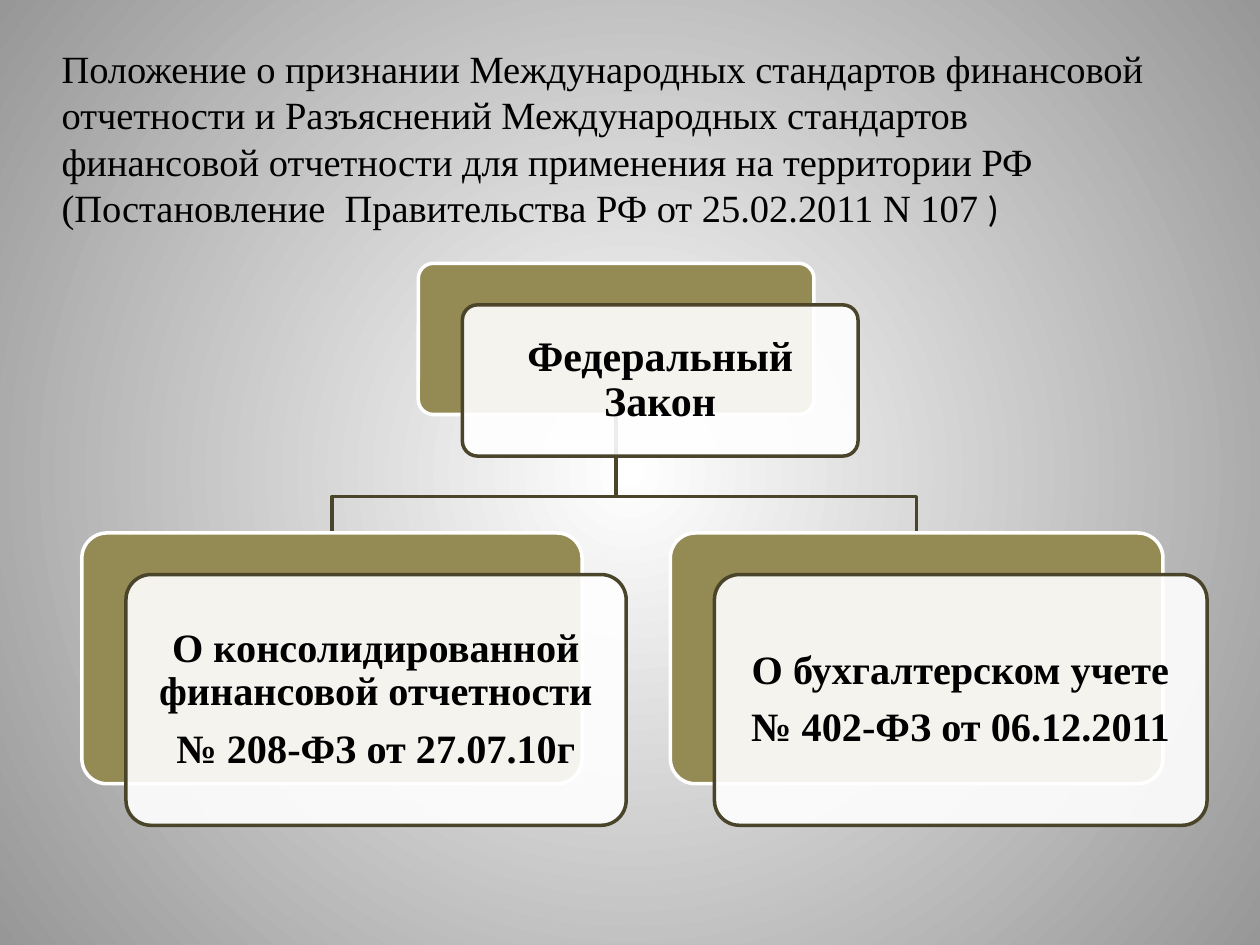
from dataclasses import dataclass

from lxml import etree
from pptx import Presentation
from pptx import util as u
from pptx.dml.color import RGBColor
from pptx.enum import shapes, text
from pptx.oxml import parse_xml
from pptx.oxml.ns import nsdecls, qn

Inches = u.Inches


@dataclass(frozen=True)
class Theme:
    olive: RGBColor = RGBColor(0x94, 0x8A, 0x54)
    dark: RGBColor = RGBColor(0x4A, 0x45, 0x2A)
    white: RGBColor = RGBColor(0xFF, 0xFF, 0xFF)
    grey: RGBColor = RGBColor(0x97, 0x97, 0x97)
    black: RGBColor = RGBColor(0, 0, 0)
    font: str = "Times New Roman"
    bracket_font: str = "Calibri"
    title_size: int = 22
    bracket_size: int = 21
    root_size: int = 24
    law_size: int = 23
    line_width: int = 2
    card_alpha: int = 90


T = Theme()
CARD_SHIFT = (0.35, 0.33)  # front card relative to its backing

TITLE = ("Положение о признании Международных стандартов финансовой отчетности "
         "и Разъяснений Международных стандартов финансовой отчетности для "
         "применения на территории РФ (Постановление  Правительства РФ "
         "от 25.02.2011 N 107 ")

# left, top, width, height, type size, paragraphs
NODES = [
    (3.32, 2.09, 3.14, 1.2, T.root_size, ["Федеральный Закон"]),
    (0.65, 4.23, 3.97, 1.99, T.law_size,
     ["О консолидированной финансовой отчетности", "№ 208-ФЗ от 27.07.10г"]),
    (5.32, 4.23, 3.91, 1.99, T.law_size,
     ["О бухгалтерском учете", "№ 402-ФЗ от 06.12.2011"]),
]


def set_background(s):
    """Radial gradient, light in the centre."""
    fill = s.background.fill
    fill.gradient()
    for stop, color in zip(fill.gradient_stops, (T.white, T.grey)):
        stop.color.rgb = color
    grad = s.background._cSld.find(".//" + qn("a:gradFill"))
    grad.remove(grad.find(qn("a:lin")))
    grad.append(parse_xml(
        f'<a:path {nsdecls("a")} path="circle"><a:fillToRect l="50000" '
        't="50000" r="50000" b="50000"/></a:path>'))


def add_title(s):
    tf = s.shapes.add_textbox(*map(Inches, (0.39, 0.31, 8.98, 1.58))).text_frame
    tf.word_wrap = True
    tf.auto_size = text.MSO_AUTO_SIZE.SHAPE_TO_FIT_TEXT
    p = tf.paragraphs[0]
    p.font.color.rgb = T.black
    for words, font, size in ((TITLE, T.font, T.title_size),
                              (")", T.bracket_font, T.bracket_size)):
        r = p.add_run()
        r.text = words
        r.font.name, r.font.size = font, u.Pt(size)
        r.font.color.rgb = T.black


def add_branch(s, parent, child):
    """Elbow from the bottom of the parent to the top of the child."""
    x1, y1 = parent[0] + parent[2] / 2, parent[1] + parent[3]
    x2, y2 = child[0] + child[2] / 2, child[1]
    bend = y2 - 0.29
    points = [(Inches(x), Inches(y))
              for x, y in ((x1, y1), (x1, bend), (x2, bend), (x2, y2))]
    fb = s.shapes.build_freeform(*points[0])
    fb.add_line_segments(points[1:], close=False)
    sp = fb.convert_to_shape()
    sp.shadow.inherit = False
    sp.fill.background()
    sp.line.color.rgb, sp.line.width = T.dark, u.Pt(T.line_width)


def add_card(s, box, fill, line):
    sp = s.shapes.add_shape(shapes.MSO_SHAPE.ROUNDED_RECTANGLE, *map(Inches, box))
    sp.adjustments[0] = 0.1
    sp.shadow.inherit = False
    sp.fill.solid()
    sp.fill.fore_color.rgb = fill
    sp.line.color.rgb, sp.line.width = line, u.Pt(T.line_width)
    return sp


def add_node(s, left, top, width, height, size, lines):
    """Olive backing with a translucent text card in front."""
    add_card(s, (left, top, width, height), T.olive, T.white)
    dx, dy = CARD_SHIFT
    sp = add_card(s, (left + dx, top + dy, width, height), T.white, T.dark)
    color = sp.fill._xPr.find(".//" + qn("a:srgbClr"))
    etree.SubElement(color, qn("a:alpha"), val=str(T.card_alpha * 1000))

    tf = sp.text_frame
    tf.word_wrap = True
    tf.vertical_anchor = text.MSO_ANCHOR.MIDDLE
    tf.margin_left = tf.margin_right = Inches(0.14)
    for i, line in enumerate(lines):
        p = tf.add_paragraph() if i else tf.paragraphs[0]
        p.text = line
        p.alignment = text.PP_ALIGN.CENTER
        p.line_spacing = 0.9
        p.space_before = u.Pt(8 if i else 0)
        p.font.name, p.font.size, p.font.bold = T.font, u.Pt(size), True
        p.font.color.rgb = T.black


def main():
    prs = Presentation()
    prs.slide_width, prs.slide_height = Inches(10), Inches(7.5)
    s = prs.slides.add_slide(prs.slide_layouts[6])
    set_background(s)
    add_title(s)

    # Hierarchy: branches lie behind the cards
    root, *laws = NODES
    for law in reversed(laws):
        add_branch(s, root, law)
    for node in NODES:
        add_node(s, *node)

    prs.save("out.pptx")


if __name__ == "__main__":
    main()
